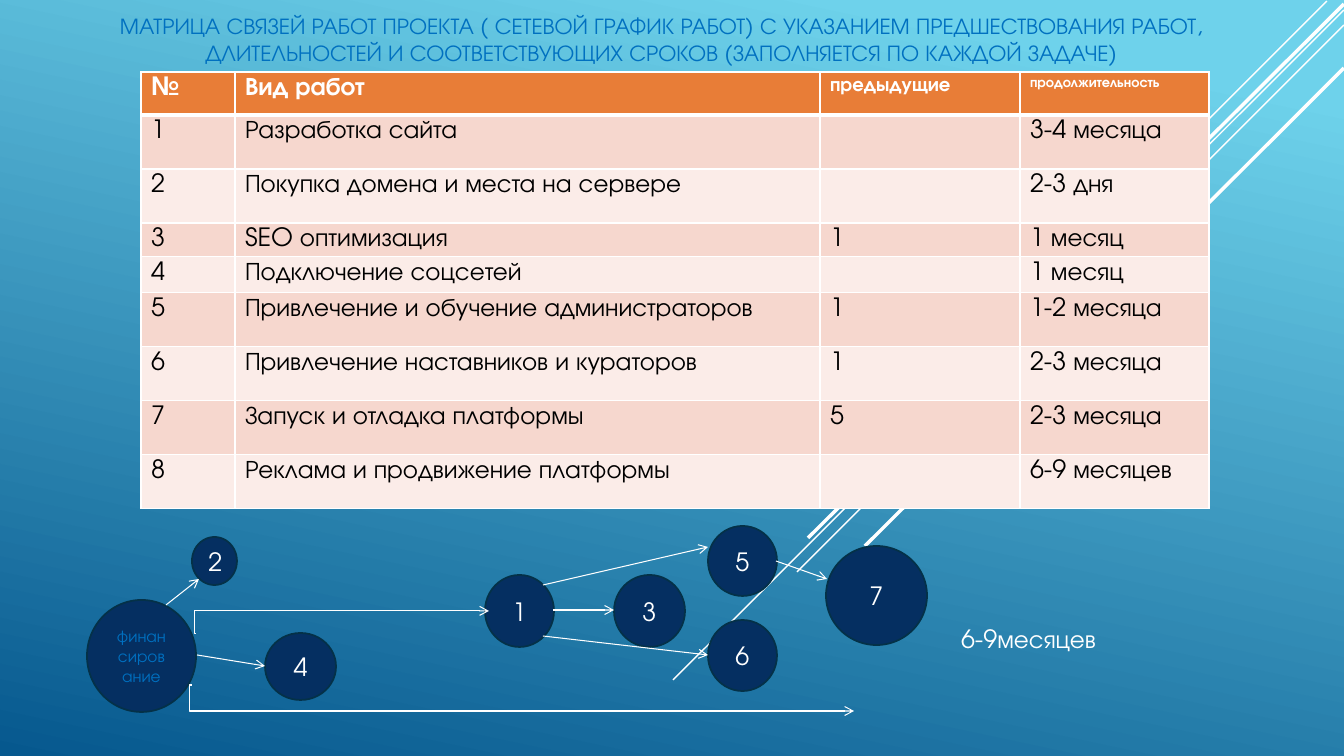
"""Builds a slide with a project work matrix and its network diagram."""
from lxml import etree
from pptx import Presentation
from pptx.dml.color import RGBColor
from pptx.enum.shapes import MSO_CONNECTOR, MSO_SHAPE
from pptx.enum.text import MSO_ANCHOR, MSO_AUTO_SIZE, PP_ALIGN
from pptx.oxml.ns import qn
from pptx.util import Emu, Pt

STRAIGHT, ELBOW = MSO_CONNECTOR.STRAIGHT, MSO_CONNECTOR.ELBOW
OVAL = MSO_SHAPE.OVAL
CENTER, LEFT = PP_ALIGN.CENTER, PP_ALIGN.LEFT
MIDDLE, BOTTOM = MSO_ANCHOR.MIDDLE, MSO_ANCHOR.BOTTOM
NO_FIT = MSO_AUTO_SIZE.NONE

FONT = "TeX Gyre Adventor"
COLORS = {
    "sky": "6ED2EB", "sea": "06588E", "white": "FFFFFF", "black": "000000",
    "blue": "0070C0", "navy": "052F61", "navy_edge": "043148",
    "header": "E87D37", "odd": "F6D7CE", "even": "FBECE8",
}
SLIDE = (1344, 756)

HEADING = ("МАТРИЦА СВЯЗЕЙ РАБОТ ПРОЕКТА ( СЕТЕВОЙ ГРАФИК РАБОТ) С УКАЗАНИЕМ "
           "ПРЕДШЕСТВОВАНИЯ РАБОТ, ДЛИТЕЛЬНОСТЕЙ И СООТВЕТСТВУЮЩИХ СРОКОВ "
           "(ЗАПОЛНЯЕТСЯ ПО КАЖДОЙ ЗАДАЧЕ)")
HEADING_BOX = (87, 16, 1148, 55)

HEADERS = [("№", 18), ("Вид работ", 18), ("предыдущие", 14), ("продолжительность", 10)]
WORKS = [
    ("Разработка сайта", "", "3-4 месяца"),
    ("Покупка домена и места на сервере", "", "2-3 дня"),
    ("SEO оптимизация", "1", "1 месяц"),
    ("Подключение соцсетей", "", "1 месяц"),
    ("Привлечение и обучение администраторов", "1", "1-2 месяца"),
    ("Привлечение наставников и кураторов", "1", "2-3 месяца"),
    ("Запуск и отладка платформы", "5", "2-3 месяца"),
    ("Реклама и продвижение платформы", "", "6-9 месяцев"),
]
MATRIX_CORNER = (141, 72)
COLUMN_WIDTHS = [94, 585, 200, 189]
ROW_HEIGHTS = [43, 54, 54, 34, 34, 54, 54, 54, 54]
CELL_TOP_MARGIN = 5

STAGES = [
    ("финансирование", 12, "blue", (87, 600, 109, 112)),
    ("2", 18, "white", (192, 537, 45, 48)),
    ("4", 18, "white", (265, 633, 71, 67)),
    ("1", 18, "white", (485, 575, 69, 72)),
    ("3", 18, "white", (614, 575, 71, 72)),
    ("5", 18, "white", (708, 526, 69, 70)),
    ("6", 18, "white", (708, 620, 69, 71)),
    ("7", 18, "white", (826, 546, 101, 99)),
]
ARROWS = [
    (STRAIGHT, (166, 605, 199, 579)),
    (STRAIGHT, (197, 655, 265, 666)),
    (ELBOW, (192, 685, 854, 711)),
    (ELBOW, (196, 634, 489, 611)),
    (STRAIGHT, (553, 610, 614, 610)),
    (STRAIGHT, (543, 585, 708, 547)),
    (STRAIGHT, (543, 636, 708, 655)),
    (STRAIGHT, (776, 561, 827, 579)),
]
RAYS = [
    (1, (1327, 1, 907, 421)),
    (1, (1344, 10, 673, 680)),
    (1, (1344, 25, 797, 572)),
    (2.5, (1344, 4, 808, 538)),
    (2.5, (1344, 68, 865, 546)),
]
TOTAL = "6-9месяцев"
TOTAL_BOX = (961, 623, 168, 30)


def px(length):
    return Emu(round(length * 914400 / 100.8))


def rgb(name):
    return RGBColor.from_string(COLORS[name])


def write(frame, text, size, color, align=LEFT, bold=False):
    paragraph = frame.paragraphs[0]
    paragraph.alignment = align
    run = paragraph.add_run()
    run.text = text
    run.font.name = FONT
    run.font.size = Pt(size)
    run.font.bold = bold
    run.font.color.rgb = rgb(color)


def draw_line(slide, kind, ends, width, arrow=False):
    link = slide.shapes.add_connector(kind, *map(px, ends))
    link.line.color.rgb = rgb("white")
    link.line.width = Pt(width)
    properties = link._element.spPr
    if arrow:
        etree.SubElement(properties.find(qn("a:ln")), qn("a:tailEnd"), type="arrow")
    if kind == ELBOW:
        guides = properties.find(qn("a:prstGeom")).find(qn("a:avLst"))
        etree.SubElement(guides, qn("a:gd"), name="adj1", fmla="val -400")
    etree.SubElement(properties, qn("a:effectLst"))


def add_borders(cell, widths):
    properties = cell._tc.get_or_add_tcPr()
    for side, width in widths.items():
        border = etree.SubElement(properties, qn(f"a:ln{side}"), w=str(Pt(width)))
        paint = etree.SubElement(border, qn("a:solidFill"))
        etree.SubElement(paint, qn("a:srgbClr"), val=COLORS["white"])


def add_matrix(slide):
    rows = [HEADERS] + [[(text, 18) for text in (str(number), *work)]
                        for number, work in enumerate(WORKS, 1)]
    extent = (sum(COLUMN_WIDTHS), sum(ROW_HEIGHTS))
    matrix = slide.shapes.add_table(len(rows), len(HEADERS),
                                    *map(px, MATRIX_CORNER + extent)).table
    for column, width in zip(matrix.columns, COLUMN_WIDTHS):
        column.width = px(width)
    for r, row in enumerate(rows):
        matrix.rows[r].height = px(ROW_HEIGHTS[r])
        is_header = r == 0
        fill = "header" if is_header else "odd" if r % 2 else "even"
        for c, (text, size) in enumerate(row):
            cell = matrix.cell(r, c)
            cell.margin_top = px(CELL_TOP_MARGIN)
            cell.margin_bottom = 0
            add_borders(cell, {"L": 1, "R": 1, "T": 3 if r == 1 else 1,
                               "B": 3 if is_header else 1})
            cell.fill.solid()
            cell.fill.fore_color.rgb = rgb(fill)
            if text:
                write(cell.text_frame, text, size,
                      "white" if is_header else "black", bold=is_header)


def add_stage(slide, text, size, color, box):
    stage = slide.shapes.add_shape(OVAL, *map(px, box))
    stage.shadow.inherit = False
    stage.fill.solid()
    stage.fill.fore_color.rgb = rgb("navy")
    stage.line.color.rgb = rgb("navy_edge")
    stage.line.width = Pt(1.25)
    stage.text_frame.word_wrap = True
    stage.text_frame.vertical_anchor = MIDDLE
    write(stage.text_frame, text, size, color, CENTER)


def main():
    deck = Presentation()
    deck.slide_width, deck.slide_height = map(px, SLIDE)
    slide = deck.slides.add_slide(deck.slide_layouts[0])
    subtitle = slide.placeholders[1]._element
    subtitle.getparent().remove(subtitle)

    backdrop = slide.background.fill
    backdrop.gradient()
    backdrop.gradient_angle = 258
    for stop, (position, color) in zip(backdrop.gradient_stops,
                                       [(0.1, "sky"), (1, "sea")]):
        stop.position = position
        stop.color.rgb = rgb(color)

    for width, ends in RAYS:
        draw_line(slide, STRAIGHT, ends, width)

    heading = slide.shapes.title
    heading.left, heading.top, heading.width, heading.height = map(px, HEADING_BOX)
    heading.text_frame.word_wrap = True
    heading.text_frame.auto_size = NO_FIT
    heading.text_frame.vertical_anchor = BOTTOM
    write(heading.text_frame, HEADING, 16.2, "blue", CENTER)

    add_matrix(slide)
    for stage in STAGES:
        add_stage(slide, *stage)
    for kind, ends in ARROWS:
        draw_line(slide, kind, ends, 0.75, arrow=True)

    total = slide.shapes.add_textbox(*map(px, TOTAL_BOX)).text_frame
    total.word_wrap = True
    total.margin_left = total.margin_right = total.margin_top = total.margin_bottom = 0
    write(total, TOTAL, 18, "white")

    deck.save("out.pptx")


if __name__ == "__main__":
    main()
